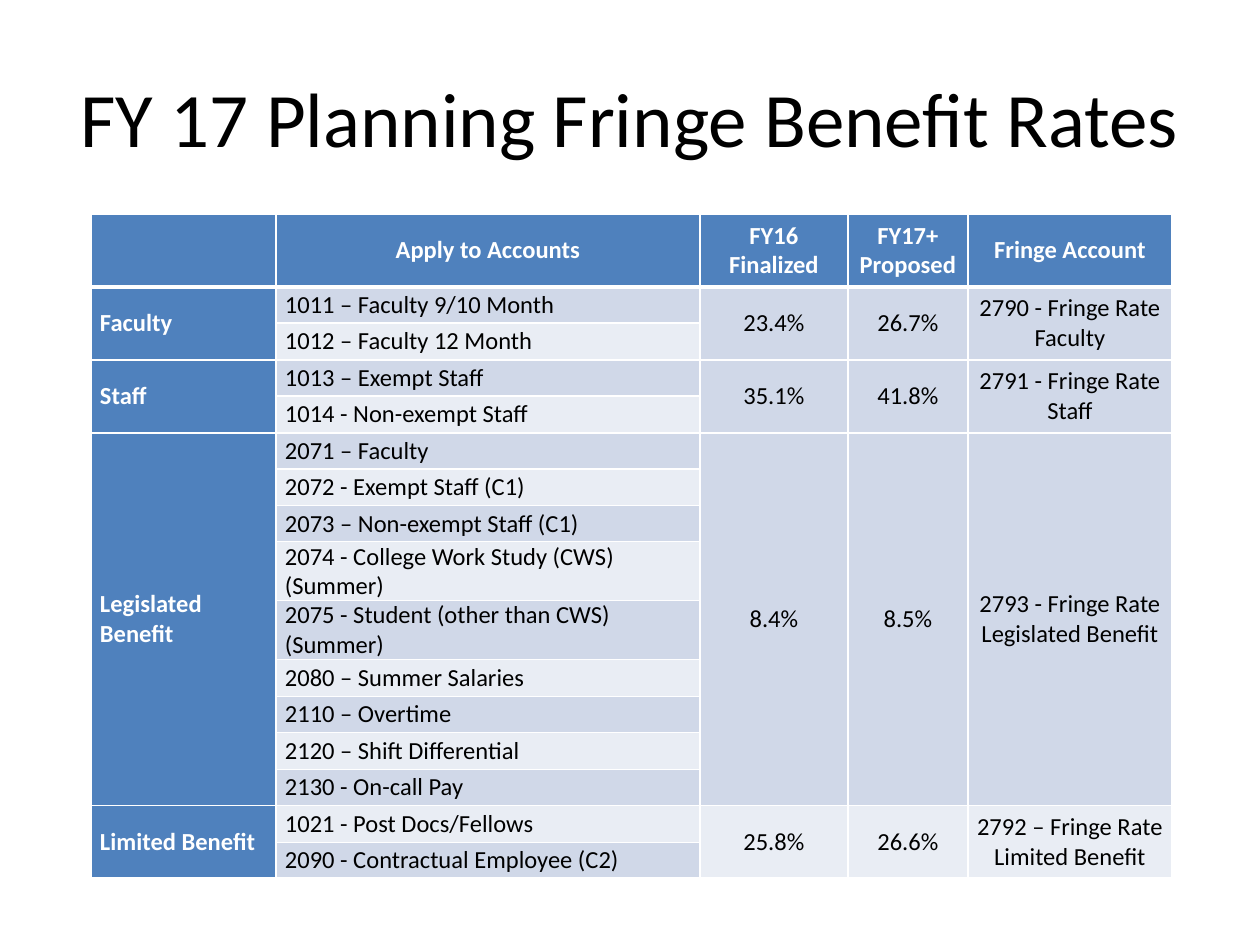
from dataclasses import dataclass

from lxml import etree
from pptx import Presentation
from pptx import util as u
from pptx.dml.color import RGBColor
from pptx.enum import text
from pptx.oxml import ns

PX = 914400 // 126


@dataclass(frozen=True)
class Theme:
    font: str = "Calibri"
    title_size: int = 44
    table_size: int = 14
    ink: str = "000000"
    white: str = "FFFFFF"
    header: str = "4F81BD"
    bands: tuple = ("E9EDF4", "D0D8E8")
    border: int = 1
    header_border: int = 3


THEME = Theme()
LEFT, CENTER = text.PP_ALIGN.LEFT, text.PP_ALIGN.CENTER
COLUMN_WIDTHS = (185, 424, 148, 120, 204)
HEADER_HEIGHT = 73
HEADINGS = ("", "Apply to Accounts", "FY16\nFinalized", "FY17+\nProposed", "Fringe Account")
GROUPS = (
    ("Faculty", "23.4%", "26.7%", "2790 - Fringe Rate Faculty",
     ("1011 – Faculty 9/10 Month", "1012 – Faculty 12 Month")),
    ("Staff", "35.1%", "41.8%", "2791 - Fringe Rate Staff",
     ("1013 – Exempt Staff", "1014 - Non-exempt Staff")),
    ("Legislated Benefit", "8.4%", "8.5%", "2793 - Fringe Rate Legislated Benefit",
     ("2071 – Faculty", "2072 - Exempt Staff (C1)", "2073 – Non-exempt Staff (C1)",
      "2074 - College Work Study (CWS) (Summer)",
      "2075 - Student (other than CWS) (Summer)",
      "2080 – Summer Salaries", "2110 – Overtime",
      "2120 – Shift Differential", "2130 - On-call Pay")),
    ("Limited Benefit", "25.8%", "26.6%", "2792 – Fringe Rate Limited Benefit",
     ("1021 - Post Docs/Fellows", "2090 - Contractual Employee (C2)")),
)


def px(length):
    return u.Emu(length * PX)


def style_paragraph(para, size, color, align, bold=False):
    para.alignment = align
    font = para.font
    font.name, font.size, font.bold = THEME.font, u.Pt(size), bold
    font.color.rgb = RGBColor.from_string(color)


def add_title(page, wording):
    box = page.shapes.add_textbox(px(63), px(38), px(1134), px(158))
    frame = box.text_frame
    frame.word_wrap = True
    frame.vertical_anchor = text.MSO_ANCHOR.MIDDLE
    frame.text = wording
    style_paragraph(frame.paragraphs[0], THEME.title_size, THEME.ink, CENTER)


def set_borders(cell, top, bottom):
    properties = cell._tc.get_or_add_tcPr()
    widths = {"L": THEME.border, "R": THEME.border, "T": top, "B": bottom}
    for side, width in widths.items():
        line = etree.SubElement(properties, ns.qn(f"a:ln{side}"), w=str(u.Pt(width)))
        fill = etree.SubElement(line, ns.qn("a:solidFill"))
        etree.SubElement(fill, ns.qn("a:srgbClr"), val=THEME.white)


def format_cell(cell, row, fill):
    set_borders(cell,
                THEME.header_border if row == 1 else THEME.border,
                THEME.header_border if row == 0 else THEME.border)
    cell.fill.solid()
    cell.fill.fore_color.rgb = RGBColor.from_string(fill)
    cell.margin_left = cell.margin_right = px(9)
    cell.margin_top = cell.margin_bottom = 0
    cell.vertical_anchor = text.MSO_ANCHOR.MIDDLE


def write_cell(cell, wording, align, heading=False):
    cell.text = wording
    color = THEME.white if heading else THEME.ink
    for para in cell.text_frame.paragraphs:
        style_paragraph(para, THEME.table_size, color, align, heading)


def fill_group(table, first, group):
    label, current, proposed, fringe, accounts = group
    last = first + len(accounts) - 1
    for row, account in enumerate(accounts, first):
        for column in range(len(COLUMN_WIDTHS)):
            band = row if column == 1 else first
            fill = THEME.header if column == 0 else THEME.bands[band % 2]
            format_cell(table.cell(row, column), row, fill)
        write_cell(table.cell(row, 1), account, LEFT)
    for column, wording in ((0, label), (2, current), (3, proposed), (4, fringe)):
        cell = table.cell(first, column)
        cell.merge(table.cell(last, column))
        write_cell(cell, wording, CENTER if column else LEFT, heading=column == 0)
    return last + 1


def add_rate_table(page):
    heights = [HEADER_HEIGHT]
    account_count = sum(len(group[-1]) for group in GROUPS)
    heights += [36 + row % 2 for row in range(account_count)]
    frame = page.shapes.add_table(len(heights), len(COLUMN_WIDTHS), px(91), px(214),
                                  px(sum(COLUMN_WIDTHS)), px(sum(heights)))
    table = frame.table
    table.horz_banding = False
    for column, width in zip(table.columns, COLUMN_WIDTHS):
        column.width = px(width)
    for row, height in zip(table.rows, heights):
        row.height = px(height)
    for column, heading in enumerate(HEADINGS):
        cell = table.cell(0, column)
        format_cell(cell, 0, THEME.header)
        write_cell(cell, heading, CENTER, heading=True)
    first = 1
    for group in GROUPS:
        first = fill_group(table, first, group)


def main():
    deck = Presentation()
    deck.slide_width, deck.slide_height = px(1260), px(945)
    page = deck.slides.add_slide(deck.slide_layouts[6])
    add_title(page, "FY 17 Planning Fringe Benefit Rates")
    add_rate_table(page)
    deck.save("out.pptx")


if __name__ == "__main__":
    main()
